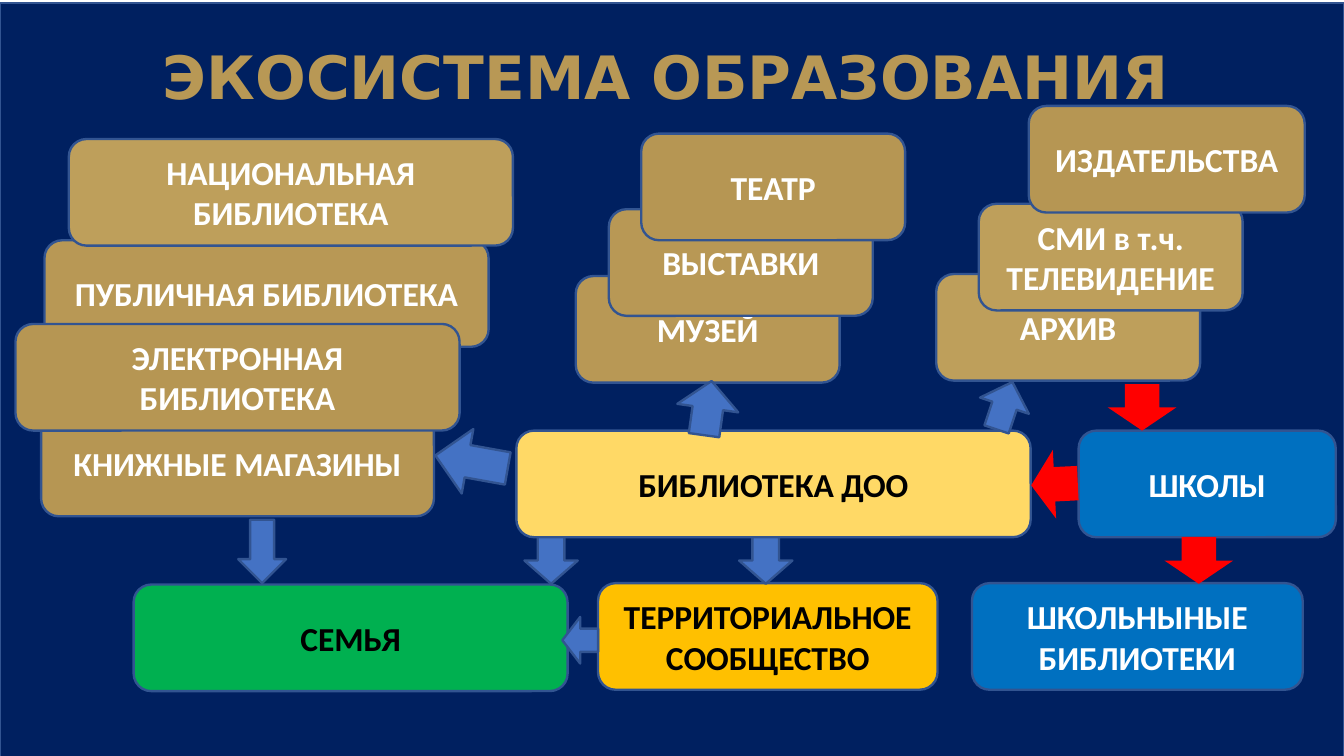
from dataclasses import dataclass

from pptx import Presentation
from pptx.dml.color import RGBColor
from pptx.enum import shapes, text
from pptx.shapes.autoshape import Shape
from pptx.slide import Slide
from pptx.util import Cm, Pt

NAVY = RGBColor(0x00, 0x20, 0x60)
OUTLINE = RGBColor(0x32, 0x54, 0x91)
GOLD = RGBColor(0xB8, 0x98, 0x55)
DARK_GOLD = RGBColor(0xB6, 0x96, 0x53)
LIGHT_GOLD = RGBColor(0xBE, 0x9F, 0x5B)
YELLOW = RGBColor(0xFF, 0xD9, 0x66)
AMBER = RGBColor(0xFF, 0xC0, 0x00)
GREEN = RGBColor(0x00, 0xB0, 0x50)
BLUE = RGBColor(0x00, 0x70, 0xC0)
ARROW_BLUE = RGBColor(0x44, 0x72, 0xC4)
RED = RGBColor(0xFF, 0x00, 0x00)
WHITE = RGBColor(0xFF, 0xFF, 0xFF)
BLACK = RGBColor(0x00, 0x00, 0x00)

SLIDE_WIDTH, SLIDE_HEIGHT = 19.91, 11.2
CARD_HEIGHT = 1.58
LIBRARY_WIDTH = 6.58
CULTURE_WIDTH = 3.91
HUB_TOP = 6.38
BOTTOM_TOP = 8.64
GAP_TOP = HUB_TOP + CARD_HEIGHT  # arrows between the hub row and the bottom row
GAP_HEIGHT = 0.69

TITLE_FONT = {"name": "DejaVu Sans", "size": Pt(25.1), "bold": True}
CARD_FONT = {"name": "Calibri", "size": Pt(14.1), "bold": True}

DOWN = shapes.MSO_SHAPE.DOWN_ARROW
RIGHT = shapes.MSO_SHAPE.RIGHT_ARROW


@dataclass
class Card:
    label: str
    left: float
    top: float
    width: float
    fill: RGBColor
    ink: RGBColor = WHITE


@dataclass
class Arrow:
    left: float
    top: float
    width: float
    height: float
    rotation: float = 0
    fill: RGBColor = ARROW_BLUE
    kind: shapes.MSO_SHAPE = DOWN


# Listed from back to front: the stacked cards overlap.
CARDS = [
    Card("МУЗЕЙ", 8.53, 4.09, CULTURE_WIDTH, GOLD),
    Card("ПУБЛИЧНАЯ БИБЛИОТЕКА", 0.66, 3.56, LIBRARY_WIDTH, GOLD),
    Card("НАЦИОНАЛЬНАЯ БИБЛИОТЕКА", 1.02, 2.06, LIBRARY_WIDTH, LIGHT_GOLD),
    Card("ВЫСТАВКИ", 9.02, 3.1, CULTURE_WIDTH, GOLD),
    Card("ТЕАТР", 9.5, 1.98, CULTURE_WIDTH, DARK_GOLD),
    Card("БИБЛИОТЕКА ДОО", 7.65, HUB_TOP, 7.62, YELLOW, BLACK),
    Card("АРХИВ", 13.87, 4.06, CULTURE_WIDTH, LIGHT_GOLD),
    Card("СМИ в т.ч. ТЕЛЕВИДЕНИЕ", 14.5, 3.02, CULTURE_WIDTH, LIGHT_GOLD),
    Card("ИЗДАТЕЛЬСТВА", 15.24, 1.57, 4.09, DARK_GOLD),
    Card("КНИЖНЫЕ МАГАЗИНЫ", 0.61, 6.07, 5.82, DARK_GOLD),
    Card("СЕМЬЯ", 1.98, 8.66, 6.43, GREEN, BLACK),
    Card("ШКОЛЬНЫНЫЕ\nБИБЛИОТЕКИ", 14.4, BOTTOM_TOP, 4.9, BLUE),
    Card("ТЕРРИТОРИАЛЬНОЕ СООБЩЕСТВО", 8.86, BOTTOM_TOP, 5.03, AMBER, BLACK),
    Card("ШКОЛЫ", 15.98, HUB_TOP, 3.81, BLUE),
    Card("ЭЛЕКТРОННАЯ БИБЛИОТЕКА", 0.23, 4.8, LIBRARY_WIDTH, DARK_GOLD),
]

ARROWS = [
    Arrow(10.03, 5.64, 0.91, 0.81, 187.9),
    Arrow(14.5, 5.64, 0.76, 0.74, 198.4),
    Arrow(6.5, 6.3, 0.97, 1.09, 100.2),
    Arrow(17.25, GAP_TOP, 1.02, GAP_HEIGHT, fill=RED),
    Arrow(7.77, GAP_TOP, 0.79, GAP_HEIGHT),
    Arrow(10.95, GAP_TOP, 0.79, GAP_HEIGHT),
    Arrow(16.41, 5.69, 1.02, GAP_HEIGHT, fill=RED),
    Arrow(15.11, 6.83, 1.02, GAP_HEIGHT, 87.3, RED),
    Arrow(8.33, 9.14, 0.53, 0.69, 180, kind=RIGHT),
    Arrow(3.53, 7.7, 0.71, 0.94),
]


def add_figure(slide: Slide, kind: shapes.MSO_SHAPE, left: float, top: float,
               width: float, height: float, fill: RGBColor) -> Shape:
    """Add a flat preset shape; red ones have no outline."""
    figure = slide.shapes.add_shape(kind, Cm(left), Cm(top), Cm(width), Cm(height))
    figure.shadow.inherit = False
    figure.fill.solid()
    figure.fill.fore_color.rgb = fill
    if fill == RED:
        figure.line.fill.background()
    else:
        figure.line.color.rgb = OUTLINE
        figure.line.width = Pt(1)
    return figure


def write_centred(holder: Shape, words: str, font: dict, ink: RGBColor) -> None:
    frame = holder.text_frame
    frame.text = words
    frame.word_wrap = True
    frame.auto_size = text.MSO_AUTO_SIZE.NONE
    frame.vertical_anchor = text.MSO_ANCHOR.MIDDLE
    for paragraph in frame.paragraphs:
        paragraph.alignment = text.PP_ALIGN.CENTER
        for run in paragraph.runs:
            for attribute, value in font.items():
                setattr(run.font, attribute, value)
            run.font.color.rgb = ink


def add_heading(slide: Slide) -> None:
    heading = slide.shapes.title
    place = {"left": 0.53, "top": 0.46, "width": 18.67, "height": 1.32}
    for attribute, value in place.items():
        setattr(heading, attribute, Cm(value))
    write_centred(heading, "ЭКОСИСТЕМА ОБРАЗОВАНИЯ", TITLE_FONT, GOLD)


def add_backdrop(slide: Slide) -> None:
    """Add the navy field behind the heading."""
    backdrop = add_figure(slide, shapes.MSO_SHAPE.RECTANGLE, 0, 0.05,
                          SLIDE_WIDTH, SLIDE_HEIGHT, NAVY)
    slide.shapes.title.element.addprevious(backdrop.element)


def add_card(slide: Slide, card: Card) -> None:
    figure = add_figure(slide, shapes.MSO_SHAPE.ROUNDED_RECTANGLE, card.left,
                        card.top, card.width, CARD_HEIGHT, card.fill)
    write_centred(figure, card.label, CARD_FONT, card.ink)


def add_arrow(slide: Slide, arrow: Arrow) -> None:
    figure = add_figure(slide, arrow.kind, arrow.left, arrow.top,
                        arrow.width, arrow.height, arrow.fill)
    figure.rotation = arrow.rotation


def main() -> None:
    deck = Presentation()
    deck.slide_width, deck.slide_height = Cm(SLIDE_WIDTH), Cm(SLIDE_HEIGHT)
    slide = deck.slides.add_slide(deck.slide_layouts.get_by_name("Title Only"))
    add_heading(slide)
    add_backdrop(slide)
    for card in CARDS:
        add_card(slide, card)
    for arrow in ARROWS:
        add_arrow(slide, arrow)
    deck.save("out.pptx")


if __name__ == "__main__":
    main()
